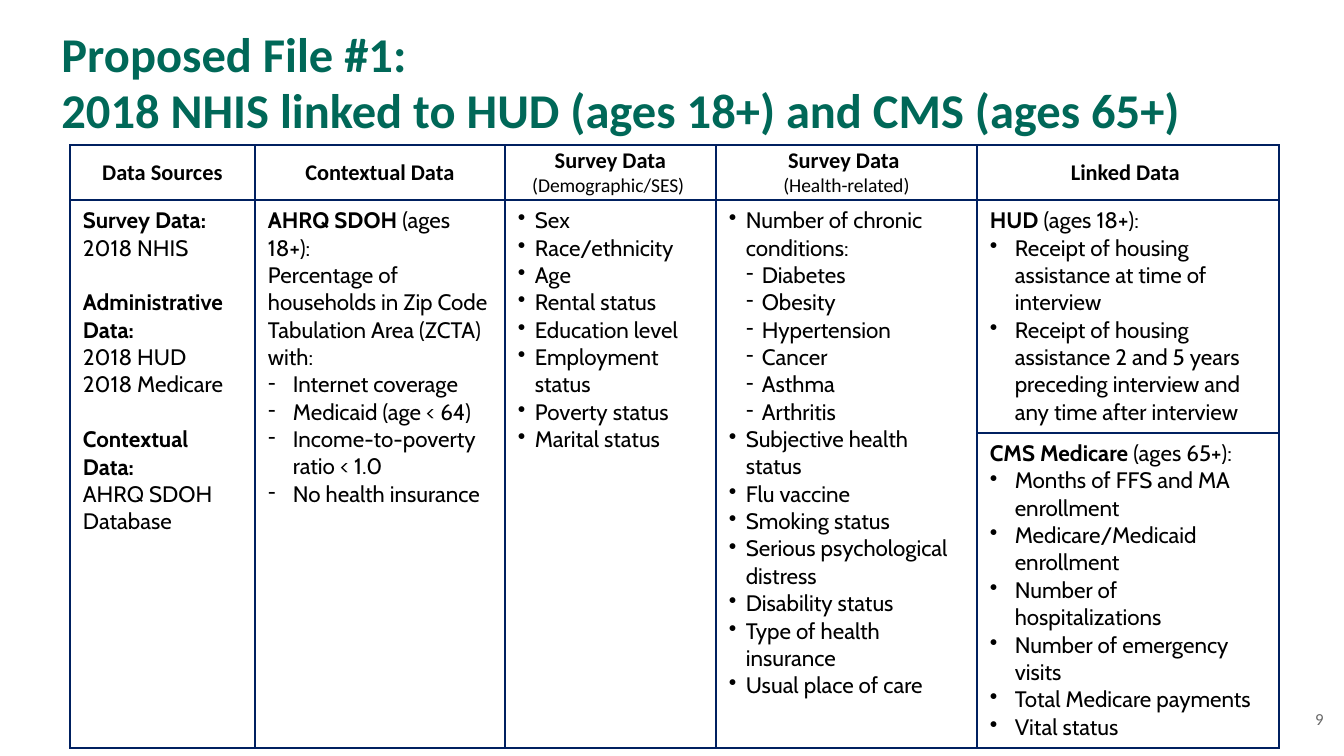
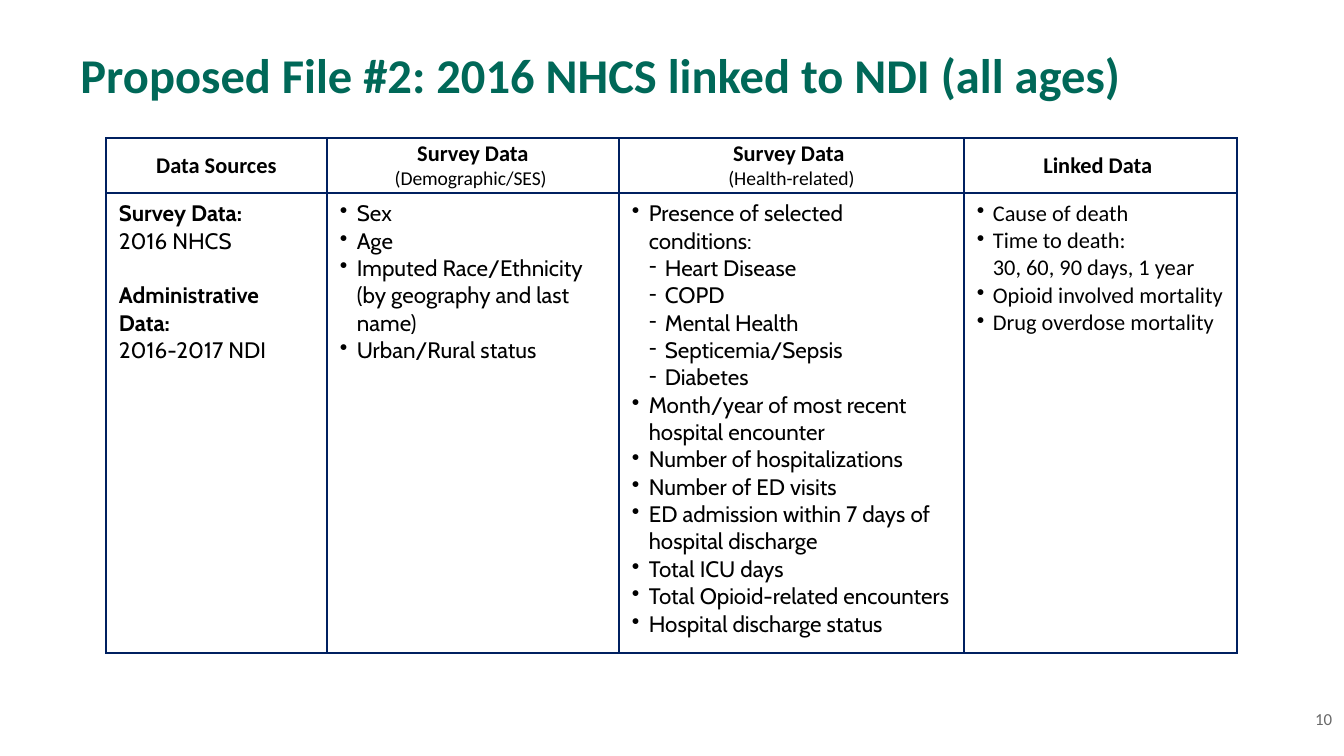
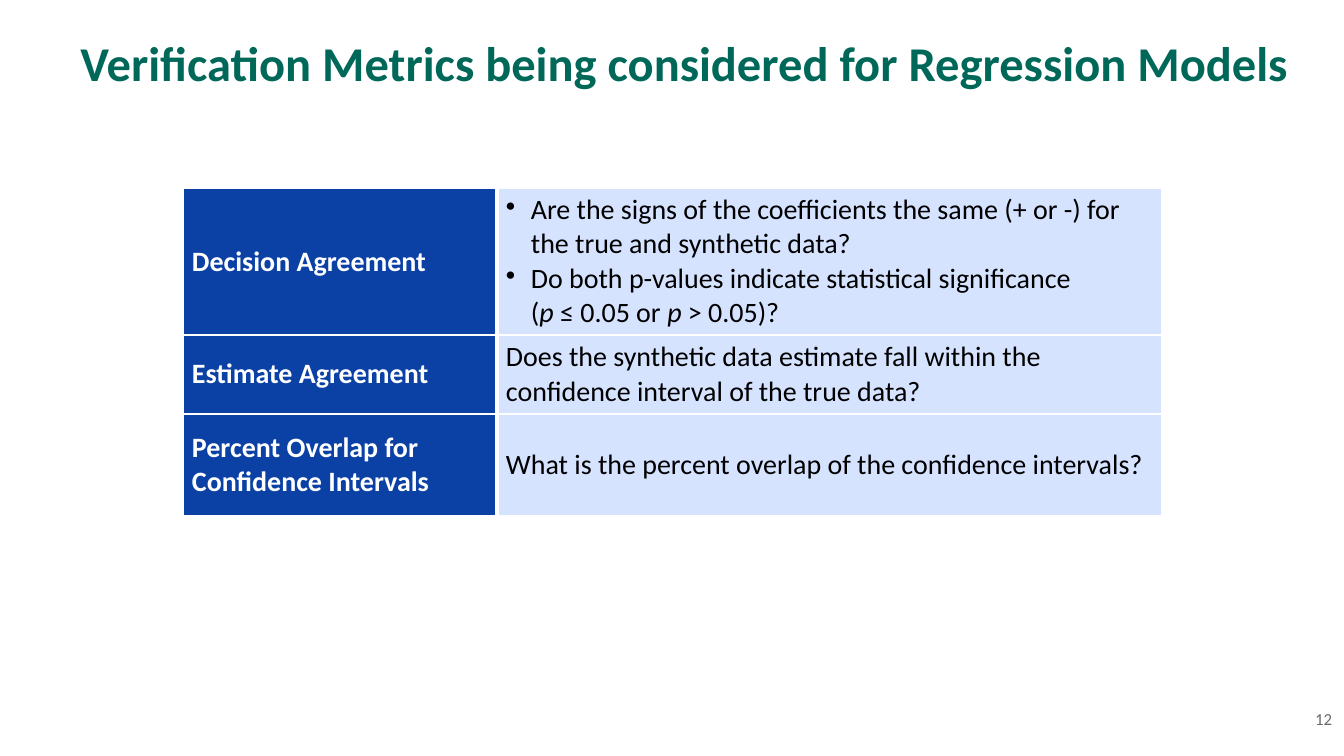
from dataclasses import dataclass
from typing import Optional

import pptx
import pptx.dml.color
import pptx.enum.text
import pptx.oxml
import pptx.oxml.ns
import pptx.util

PX = 914400 / 134.4
WIDE, HIGH = 1344, 756
GREEN, NAVY, BLUE, PALE = "006858", "002060", "0B41A5", "D6E3FF"
BLACK, WHITE, GREY = "000000", "FFFFFF", "696969"
SANS, BODY = "Calibri", "Cabin"
GAP = 14.7  # one body line, in points

Align = pptx.enum.text.PP_ALIGN
Anchor = pptx.enum.text.MSO_ANCHOR
Fit = pptx.enum.text.MSO_AUTO_SIZE


@dataclass(frozen=True)
class Look:
    """How the text and ground of a table cell are set."""
    font: str
    size: float
    color: str = BLACK
    bold: bool = False
    fill: Optional[str] = None
    pad: tuple[int, int] = (13, 7)
    anchor: Anchor = Anchor.TOP
    align: Align = Align.LEFT


@dataclass(frozen=True)
class Para:
    """One paragraph; text between bars is set in the accent style."""
    text: str
    mark: str = ""
    left: int = 0
    hang: int = 0
    bold: Optional[bool] = None
    size: Optional[float] = None
    accent: str = "bold"
    before: float = 0
    after: float = 0


@dataclass(frozen=True)
class Cell:
    look: Look
    paras: list[Para]


@dataclass(frozen=True)
class Grid:
    left: int
    top: int
    high: int
    cols: list[int]
    rows: list[int]
    cells: list[list[Optional[Cell]]]
    edge: str = NAVY
    split: float = 1  # width of the lines between columns
    merged: int = 0  # leading columns whose last two rows are one cell


@dataclass(frozen=True)
class Page:
    number: int
    title: str
    box: tuple[int, int, int, int]
    grid: Grid


HEAD = Look(SANS, 12, bold=True, pad=(9, 0), anchor=Anchor.MIDDLE, align=Align.CENTER)
TEXT = Look(BODY, 12)
PLAIN = Look(SANS, 12)
LABEL = Look(SANS, 15, WHITE, True, BLUE, (9, 5), Anchor.MIDDLE)
FACT = Look(SANS, 15, BLACK, False, PALE, (9, 5), Anchor.MIDDLE)


def px(n: float) -> int:
    return round(n * PX)


def rgb(code: str) -> pptx.dml.color.RGBColor:
    return pptx.dml.color.RGBColor.from_string(code)


def style(font, name: str, size: float, color: str, bold: bool = False) -> None:
    font.name, font.size, font.bold = name, pptx.util.Pt(size), bold
    font.color.rgb = rgb(color)


def node(xml: str):
    """Parse an element in the drawing namespace."""
    head, mid, tail = xml.partition(" ")
    return pptx.oxml.parse_xml(f"{head} {pptx.oxml.ns.nsdecls('a')}{mid}{tail}")


def dots(*texts: str, left: int = 17, mark: str = "•") -> list[Para]:
    return [Para(text, mark, left, -left) for text in texts]


def subs(*texts: str) -> list[Para]:
    return [Para(text, "‐", 33, -16) for text in texts]


def head(text: str, note: str = "") -> Cell:
    if not note:
        return Cell(HEAD, [Para(text, after=6)])
    return Cell(HEAD, [Para(text), Para(note, bold=False, size=10.5)])


def source(*groups: tuple[str, ...]) -> Cell:
    """Bold headings, each followed by its plain lines."""
    paras = []
    for name, *lines in groups:
        paras.append(Para(name, bold=True, before=GAP if paras else 0))
        paras += [Para(line) for line in lines]
    return Cell(TEXT, paras)


def write(par, para: Para, look: Look) -> None:
    props = par._p.get_or_add_pPr()
    if para.left:
        props.set("marL", str(px(para.left)))
        props.set("indent", str(px(para.hang)))
    par.alignment = look.align
    par.space_before = pptx.util.Pt(para.before)
    par.space_after = pptx.util.Pt(para.after)
    if para.mark:
        props.append(node(f'<a:buChar char="{para.mark}"/>'))
    parts = para.text.split("|")
    bold = look.bold if para.bold is None else para.bold
    style(par.font, look.font, para.size or look.size, look.color, bold)
    for i, part in enumerate(parts):
        if part:
            run = par.add_run()
            run.text = part
            if i % 2:
                setattr(run.font, para.accent, True)


def border(cell, color: str, widths: dict[str, float]) -> None:
    props = cell._tc.get_or_add_tcPr()
    for i, (side, width) in enumerate(widths.items()):
        props.insert(i, node(
            f'<a:ln{side} w="{pptx.util.Pt(width)}"><a:solidFill>'
            f'<a:srgbClr val="{color}"/></a:solidFill></a:ln{side}>'))


def fill(cell, data: Cell) -> None:
    look = data.look
    cell.margin_left = cell.margin_right = px(look.pad[0])
    cell.margin_top = cell.margin_bottom = px(look.pad[1])
    cell.vertical_anchor = look.anchor
    frame = cell.text_frame
    for i, para in enumerate(data.paras):
        write(frame.add_paragraph() if i else frame.paragraphs[0], para, look)


def draw(slide, grid: Grid) -> None:
    shape = slide.shapes.add_table(
        len(grid.rows), len(grid.cols), px(grid.left), px(grid.top),
        px(sum(grid.cols)), px(grid.high))
    table = shape.table
    table.first_row = table.horz_banding = False
    for col, width in zip(table.columns, grid.cols):
        col.width = px(width)
    for row, height in zip(table.rows, grid.rows):
        row.height = px(height)
    shape.height = px(grid.high)
    last = len(grid.cols) - 1
    for r, row in enumerate(grid.cells):
        for c, data in enumerate(row):
            cell = table.cell(r, c)
            if data and data.look.fill:
                cell.fill.solid()
                cell.fill.fore_color.rgb = rgb(data.look.fill)
            else:
                cell.fill.background()
            border(cell, grid.edge, {
                "L": grid.split if c else 1, "R": grid.split if c < last else 1,
                "T": 1, "B": 1})
            if data:
                fill(cell, data)
    end = len(grid.rows) - 1
    for c in range(grid.merged):
        table.cell(end - 1, c).merge(table.cell(end, c))


def build(deck, page: Page) -> None:
    slide = deck.slides.add_slide(deck.slide_layouts[5])
    title = slide.shapes.title
    title.left, title.top, title.width, title.height = map(px, page.box)
    frame = title.text_frame
    frame.text = page.title
    frame.word_wrap, frame.auto_size = True, Fit.NONE
    frame.vertical_anchor = Anchor.MIDDLE
    par = frame.paragraphs[0]
    par.alignment, par.line_spacing = Align.LEFT, pptx.util.Pt(30)
    style(par.font, SANS, 26, GREEN, True)

    draw(slide, page.grid)

    foot = slide.shapes.add_textbox(px(1302), px(702), px(45), px(34)).text_frame
    foot.word_wrap, foot.auto_size = False, Fit.SHAPE_TO_FIT_TEXT
    foot.text = str(page.number)
    style(foot.paragraphs[0].font, SANS, 9, GREY)


SURVEY = [head("Survey Data", "(Demographic/SES) "),
          head("Survey Data ", "(Health-related)"), head("Linked Data ")]

LINKED = Grid(
    70, 145, 566, [185, 250, 211, 261, 302], [55, 198, 262], merged=4, cells=[
        [head("Data Sources"), head("Contextual Data"), *SURVEY],
        [source(("Survey Data:", "2018 NHIS"),
                ("Administrative Data:", "2018 HUD", "2018 Medicare"),
                ("Contextual Data:", "AHRQ SDOH Database")),
         Cell(TEXT, [
             Para("|AHRQ SDOH |(ages 18+):"),
             Para("Percentage of households in Zip Code Tabulation Area (ZCTA) with:"),
             *dots("Internet coverage", "Medicaid (age < 64)",
                   "Income-to-poverty ratio < 1.0", "No health insurance",
                   left=25, mark="‐")]),
         Cell(TEXT, dots("Sex", "Race/ethnicity", "Age", "Rental status",
                         "Education level", "Employment status",
                         "Poverty status", "Marital status")),
         Cell(TEXT, [
             *dots("Number of chronic conditions:"),
             *subs("Diabetes", "Obesity", "Hypertension", "Cancer", "Asthma",
                   "Arthritis"),
             *dots("Subjective health status", "Flu vaccine", "Smoking status",
                   "Serious psychological distress", "Disability status",
                   "Type of health insurance", "Usual place of care")]),
         Cell(TEXT, [
             Para("|HUD |(ages 18+):"),
             *dots("Receipt of housing assistance at time of interview",
                   "Receipt of housing assistance 2 and 5 years preceding "
                   "interview and any time after interview", left=25)])],
        [None, None, None, None,
         Cell(TEXT, [
             Para("|CMS Medicare |(ages 65+):"),
             *dots("Months of FFS and MA enrollment",
                   "Medicare/Medicaid enrollment", "Number of hospitalizations",
                   "Number of emergency visits", "Total Medicare payments",
                   "Vital status", left=25)])]])

DEATHS = Grid(
    106, 138, 515, [221, 292, 345, 273], [55, 460], [
        [head("Data Sources"), *SURVEY],
        [source(("Survey Data:", "2016 NHCS"),
                ("Administrative Data:", "2016-2017 NDI")),
         Cell(TEXT, dots("Sex", "Age",
                         "Imputed Race/Ethnicity (by geography and last name)",
                         "Urban/Rural status")),
         Cell(TEXT, [
             *dots("Presence of selected conditions:"),
             *subs("Heart Disease", "COPD", "Mental Health",
                   "Septicemia/Sepsis", "Diabetes"),
             *dots("Month/year of most recent hospital encounter",
                   "Number of hospitalizations", "Number of ED visits",
                   "ED admission within 7 days of hospital discharge",
                   "Total ICU days", "Total Opioid-related encounters",
                   "Hospital discharge status")]),
         Cell(PLAIN, [
             *dots("Cause of death", "Time to death:", left=16),
             Para("30, 60, 90 days, 1 year", left=16),
             *dots("Opioid involved mortality", "Drug overdose mortality",
                   left=16)])]])

METRICS = Grid(
    183, 188, 324, [314, 665], [110, 77, 102], edge=WHITE, split=2.25, cells=[
        [Cell(LABEL, [Para("Decision Agreement")]),
         Cell(FACT, [
             *dots("Are the signs of the coefficients the same (+ or -) for "
                   "the true and synthetic data?",
                   "Do both p-values indicate statistical significance", left=25),
             Para("(|p| ≤ 0.05 or |p| > 0.05)?", left=33, hang=-8,
                  accent="italic")])],
        [Cell(LABEL, [Para("Estimate Agreement")]),
         Cell(FACT, [Para("Does the synthetic data estimate fall within the "
                          "confidence interval of the true data?")])],
        [Cell(LABEL, [Para("Percent Overlap for Confidence Intervals")]),
         Cell(FACT, [Para("What is the percent overlap of the confidence "
                          "intervals?")])]])

PAGES = [
    Page(9, "Proposed File #1: \v2018 NHIS linked to HUD (ages 18+) and CMS (ages 65+)",
         (48, 19, 1282, 126), LINKED),
    Page(10, "Proposed File #2: 2016 NHCS linked to NDI (all ages)",
         (67, 12, 1210, 126), DEATHS),
    Page(12, "Verification Metrics being considered for Regression Models",
         (67, 0, 1249, 126), METRICS),
]


def main() -> None:
    deck = pptx.Presentation()
    deck.slide_width, deck.slide_height = px(WIDE), px(HIGH)
    for page in PAGES:
        build(deck, page)
    deck.save("out.pptx")


if __name__ == "__main__":
    main()
